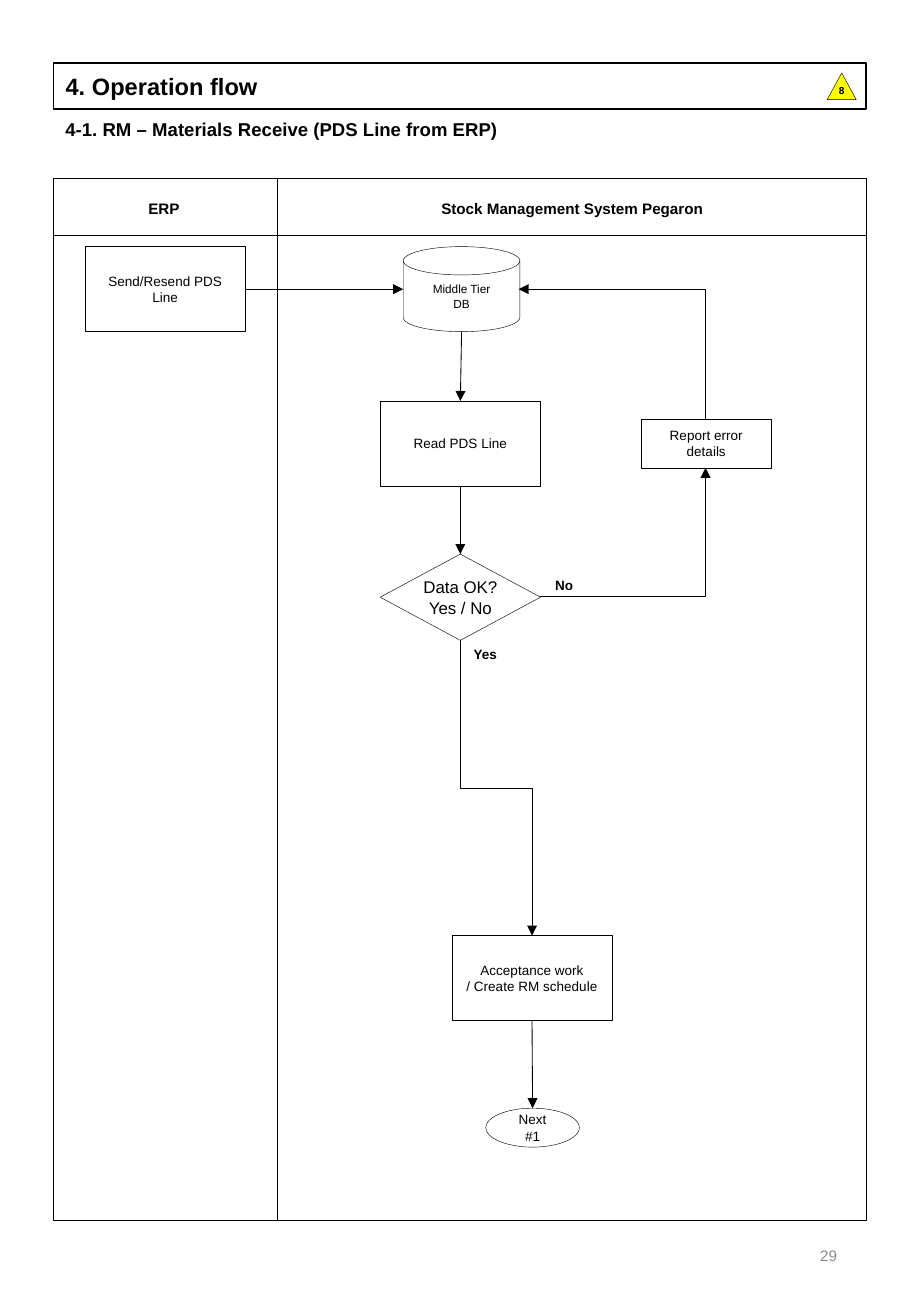
from pptx import Presentation
from pptx.dml.color import RGBColor
from pptx.enum.shapes import MSO_CONNECTOR, MSO_SHAPE
from pptx.enum.text import MSO_ANCHOR, MSO_AUTO_SIZE, PP_ALIGN
from pptx.oxml.ns import qn
from pptx.util import Inches, Pt
from lxml.etree import SubElement

BLACK, GREY, WHITE, YELLOW = "000000", "8C8C8C", "FFFFFF", "FFFF00"
FONT = "Arial"
HAIRLINE = 0.25


def color(hex_string):
    return RGBColor.from_string(hex_string)


def write(shape, text, size, bold=False, ink=BLACK, align=PP_ALIGN.CENTER,
          anchor=MSO_ANCHOR.MIDDLE):
    """Fill a shape with text, one paragraph per line."""
    frame = shape.text_frame
    frame.word_wrap = True
    frame.auto_size = MSO_AUTO_SIZE.NONE
    frame.vertical_anchor = anchor
    for index, line in enumerate(text.split("\n")):
        para = frame.add_paragraph() if index else frame.paragraphs[0]
        para.alignment = align
        span = para.add_run()
        span.text = line
        span.font.name = FONT
        span.font.size = Pt(size)
        span.font.bold = bold
        span.font.color.rgb = color(ink)


def add_label(page, text, left, top, width, height, size, **style):
    box = page.shapes.add_textbox(Inches(left), Inches(top), Inches(width), Inches(height))
    write(box, text, size, **style)
    return box


def add_node(page, kind, left, top, width, height, text="", size=8, fill=None, bold=False):
    node = page.shapes.add_shape(kind, Inches(left), Inches(top), Inches(width), Inches(height))
    node.shadow.inherit = False
    if fill:
        node.fill.solid()
        node.fill.fore_color.rgb = color(fill)
    else:
        node.fill.background()
    node.line.color.rgb = color(BLACK)
    node.line.width = Pt(HAIRLINE)
    if text:
        write(node, text, size, bold)
    return node


def add_line(page, start, end, arrow=True, kind=MSO_CONNECTOR.STRAIGHT):
    points = [Inches(value) for value in (*start, *end)]
    line = page.shapes.add_connector(kind, *points)
    line.line.color.rgb = color(BLACK)
    line.line.width = Pt(0.5)
    if arrow:
        SubElement(line.line._get_or_add_ln(), qn("a:tailEnd"), type="triangle")
    SubElement(line._element.spPr, qn("a:effectLst"))
    return line


def add_elbow(page, start, end, flip, quarter_turn=False, single_bend=False):
    """Draw a bent arrow; a quarter turn swaps its frame about its centre."""
    width, height = abs(end[0] - start[0]), abs(end[1] - start[1])
    if quarter_turn:
        width, height = height, width
    left = (start[0] + end[0] - width) / 2
    top = (start[1] + end[1] - height) / 2
    elbow = add_line(page, (left, top), (left + width, top + height),
                     kind=MSO_CONNECTOR.ELBOW)
    properties = elbow._element.spPr
    frame = properties.find(qn("a:xfrm"))
    frame.set(flip, "1")
    if quarter_turn:
        frame.set("rot", str(270 * 60000))
    if single_bend:
        properties.find(qn("a:prstGeom")).set("prst", "bentConnector2")


def add_heading(page):
    title = page.shapes.title
    title.left, title.top = Inches(0.44), Inches(0.52)
    title.width, title.height = Inches(6.69), Inches(0.38)
    title.line.color.rgb = color(BLACK)
    title.line.width = Pt(1)
    write(title, "4. Operation flow", 14, bold=True, align=PP_ALIGN.LEFT)
    add_label(page, "4-1. RM – Materials Receive (PDS Line from ERP)", 0.44, 0.92, 6.69, 0.29,
              11, bold=True, align=PP_ALIGN.LEFT, anchor=MSO_ANCHOR.TOP)
    badge = add_node(page, MSO_SHAPE.ISOSCELES_TRIANGLE, 6.81, 0.6, 0.24, 0.22,
                     "8", 6, YELLOW, bold=True)
    badge.text_frame.margin_top = 0


def add_lanes(page):
    for height in (8.57, 0.47):
        add_node(page, MSO_SHAPE.RECTANGLE, 0.44, 1.47, 6.69, height)
    add_line(page, (2.28, 1.47), (2.28, 10.04), arrow=False)
    add_label(page, "ERP", 0.43, 1.48, 1.84, 0.47, 9, bold=True)
    add_label(page, "Stock Management System Pegaron", 2.29, 1.48, 4.84, 0.47, 9, bold=True)


def add_flow(page):
    # Steps
    step = MSO_SHAPE.RECTANGLE
    send = add_node(page, step, 0.7, 2.03, 1.32, 0.7, "Send/Resend PDS Line")
    add_node(page, MSO_SHAPE.FLOWCHART_MAGNETIC_DISK, 3.32, 2.03, 0.96, 0.7,
             "Middle Tier\nDB", 7)
    read = add_node(page, step, 3.13, 3.3, 1.32, 0.7, "Read PDS Line")
    add_node(page, step, 5.28, 3.45, 1.07, 0.4, "Report error details", fill=WHITE)
    decision = add_node(page, MSO_SHAPE.FLOWCHART_DECISION, 3.13, 4.56, 1.32, 0.71,
                        "Data OK?\nYes / No", 10)
    decision.text_frame.margin_left = decision.text_frame.margin_right = 0
    accept = add_node(page, step, 3.72, 7.7, 1.32, 0.7,
                      "Acceptance work\n/ Create RM schedule")
    follow_up = add_node(page, MSO_SHAPE.OVAL, 4, 9.12, 0.77, 0.32, "Next #1")

    # Straight arrows
    add_line(page, (2.02, 2.38), (3.32, 2.38)).begin_connect(send, 3)
    add_line(page, (3.8, 2.73), (3.79, 3.3)).end_connect(read, 0)
    for source, target, x, top, bottom in ((read, decision, 3.79, 4, 4.56),
                                           (accept, follow_up, 4.38, 8.4, 9.12)):
        arrow = add_line(page, (x, top), (x, bottom))
        arrow.begin_connect(source, 2)
        arrow.end_connect(target, 0)

    # Branches of the decision and the way back to the database
    add_elbow(page, (4.45, 4.91), (5.81, 3.85), "flipV", single_bend=True)
    add_elbow(page, (5.81, 3.45), (4.27, 2.38), "flipV", quarter_turn=True, single_bend=True)
    add_elbow(page, (3.79, 5.27), (4.38, 7.7), "flipH", quarter_turn=True)
    add_label(page, "Yes", 3.74, 5.27, 0.51, 0.23, 8, bold=True)
    add_label(page, "No", 4.39, 4.7, 0.51, 0.23, 8, bold=True)


def main():
    deck = Presentation()
    deck.slide_width, deck.slide_height = Inches(7.5), Inches(10.83)
    page = deck.slides.add_slide(deck.slide_layouts[5])
    add_heading(page)
    add_lanes(page)
    add_flow(page)
    # Page number
    add_label(page, "29", 5.3, 10.04, 1.69, 0.58, 9, ink=GREY, align=PP_ALIGN.RIGHT)
    deck.save("out.pptx")


if __name__ == "__main__":
    main()
